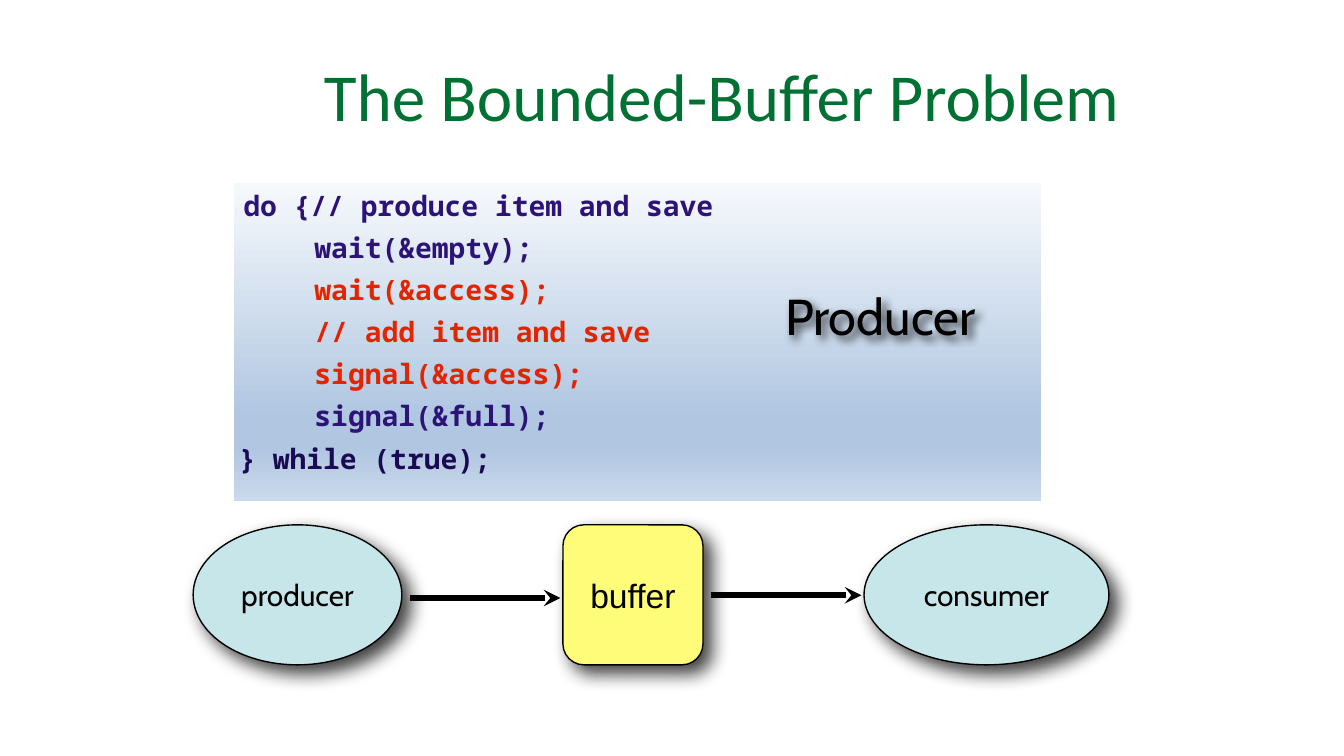
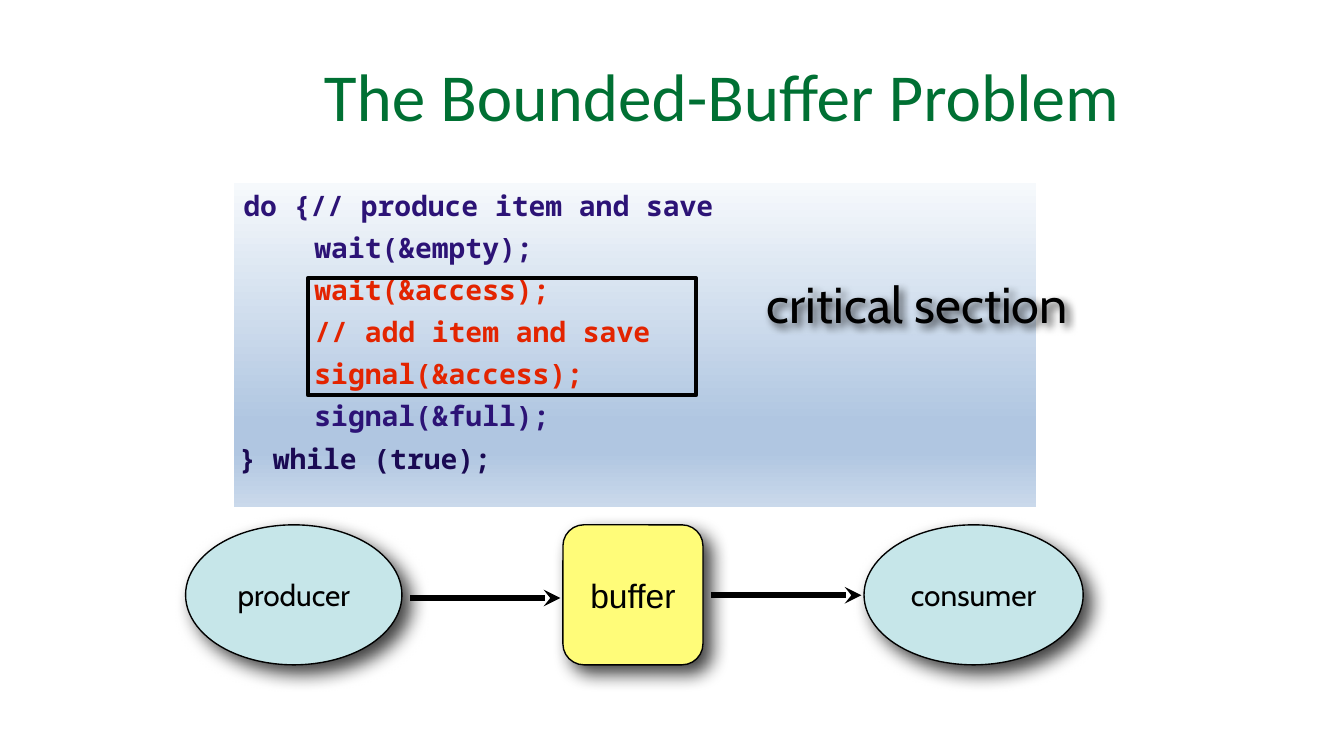
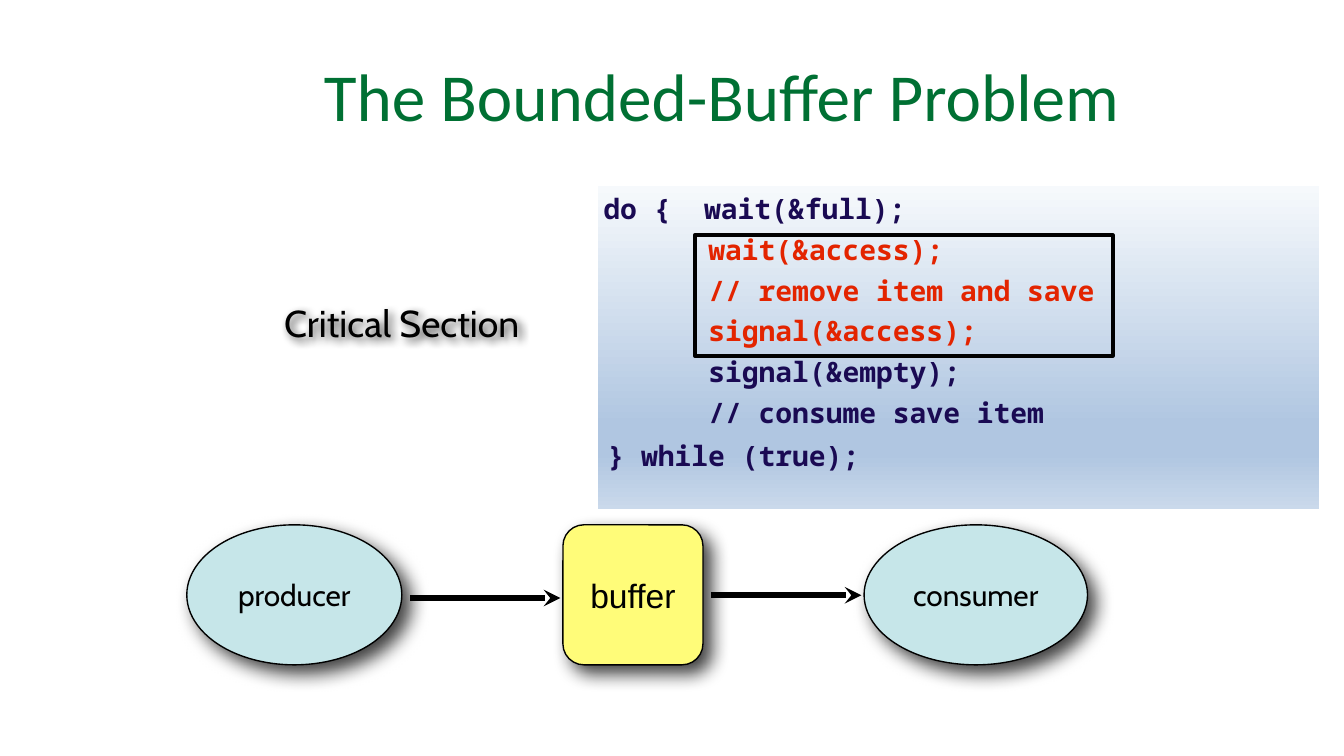
from lxml import etree
from pptx import Presentation
from pptx.dml.color import RGBColor
from pptx.enum.shapes import MSO_CONNECTOR, MSO_SHAPE
from pptx.enum.text import MSO_ANCHOR, PP_ALIGN
from pptx.oxml import parse_xml
from pptx.oxml.ns import nsdecls, qn
from pptx.util import Pt

RECT, OVAL, ROUNDED = MSO_SHAPE.RECTANGLE, MSO_SHAPE.OVAL, MSO_SHAPE.ROUNDED_RECTANGLE
STRAIGHT = MSO_CONNECTOR.STRAIGHT
TOP, MIDDLE = MSO_ANCHOR.TOP, MSO_ANCHOR.MIDDLE
LEFT, CENTER, RIGHT = PP_ALIGN.LEFT, PP_ALIGN.CENTER, PP_ALIGN.RIGHT

BLACK = RGBColor(0x00, 0x00, 0x00)
GREEN = RGBColor(0x00, 0x70, 0x33)
VIOLET = RGBColor(0x2C, 0x13, 0x76)
INDIGO = RGBColor(0x1A, 0x0A, 0x53)
RED = RGBColor(0xE3, 0x24, 0x00)
PALE_BLUE = RGBColor(0xC6, 0xE6, 0xE9)
YELLOW = RGBColor(0xFF, 0xFC, 0x79)
PANEL_STOPS = [
    (0, RGBColor(0xF6, 0xF9, 0xFC)),
    (74, RGBColor(0xB0, 0xC6, 0xE1)),
    (83, RGBColor(0xB0, 0xC6, 0xE1)),
    (100, RGBColor(0xCA, 0xD9, 0xEB)),
]
TITLE_FONT, LABEL_FONT, BUFFER_FONT, CODE_FONT = "Calibri", "Cabin", "Arial", "Noto Sans Mono"


class Deck:
    """Holds the shared style and the current slide."""

    def __init__(self):
        self.prs = Presentation()
        self.prs.slide_width, self.prs.slide_height = Pt(720), Pt(405)
        self.s = None

    def new_slide(self, title):
        self.s = self.prs.slides.add_slide(self.prs.slide_layouts[6])
        self.text(title, (116.6, 5.8, 486, 89.3), TITLE_FONT, 36, GREEN, RIGHT, MIDDLE)

    def frame(self, sp, anchor):
        tf = sp.text_frame
        tf.word_wrap = True
        tf.vertical_anchor = anchor
        tf.margin_left = tf.margin_right = tf.margin_top = tf.margin_bottom = Pt(2.9)
        return tf

    def style(self, p, text, font, size, color, align, indent=0, bold=False):
        p.text = text
        p.alignment = align
        p._p.get_or_add_pPr().set("indent", str(Pt(indent)))
        p.font.name, p.font.size, p.font.bold = font, Pt(size), bold
        p.font.color.rgb = color

    def shadow(self, sp, blur, distance):
        sp._element.spPr.append(parse_xml(
            f'<a:effectLst {nsdecls("a")}><a:outerShdw blurRad="{Pt(blur)}" dist="{Pt(distance)}" '
            f'dir="2700000" algn="tl" rotWithShape="0"><a:srgbClr val="{BLACK}">'
            '<a:alpha val="75000"/></a:srgbClr></a:outerShdw></a:effectLst>'))

    def text(self, text, box, font, size, color, align=CENTER, anchor=TOP):
        sp = self.s.shapes.add_textbox(*map(Pt, box))
        self.style(self.frame(sp, anchor).paragraphs[0], text, font, size, color, align)
        return sp

    def label(self, text, box, size):
        self.shadow(self.text(text, box, LABEL_FONT, size, BLACK), 5, 3)

    def shape(self, kind, box, fill=None, line_width=None):
        sp = self.s.shapes.add_shape(kind, *map(Pt, box))
        if fill is None:
            sp.fill.background()
        else:
            sp.fill.solid()
            sp.fill.fore_color.rgb = fill
        if line_width is None:
            sp.line.fill.background()
        else:
            sp.line.color.rgb = BLACK
            sp.line.width = Pt(line_width)
        return sp

    def node(self, text, kind, left, width, fill, font=LABEL_FONT, size=16):
        sp = self.shape(kind, (left, 281.2, width, 75), fill, 0.75)
        if kind == ROUNDED:
            sp.adjustments[0] = 0.15
        self.shadow(sp, 10, 6)
        self.style(self.frame(sp, MIDDLE).paragraphs[0], text, font, size, BLACK, CENTER)

    def arrow(self, left, y, length=80.6):
        c = self.s.shapes.add_connector(STRAIGHT, Pt(left), Pt(y), Pt(left + length), Pt(y))
        c.line.color.rgb = BLACK
        c.line.width = Pt(3)
        etree.SubElement(c.line._get_or_add_ln(), qn("a:tailEnd"), type="stealth")
        etree.SubElement(c._element.spPr, qn("a:effectLst"))

    def code_panel(self, box, lines, gap):
        """Each line is (text, colour, indent); the closing line has a wider gap."""
        sp = self.shape(RECT, box)
        sp.shadow.inherit = False
        stops = "".join(f'<a:gs pos="{pos * 1000}"><a:srgbClr val="{color}"/></a:gs>'
                        for pos, color in PANEL_STOPS)
        spPr = sp._element.spPr
        spPr.replace(spPr.find(qn("a:noFill")), parse_xml(
            f'<a:gradFill {nsdecls("a")} rotWithShape="1"><a:gsLst>{stops}</a:gsLst>'
            '<a:lin ang="5400000" scaled="0"/></a:gradFill>'))
        tf = self.frame(sp, TOP)
        for i, (text, color, indent) in enumerate(lines):
            p = tf.add_paragraph() if i else tf.paragraphs[0]
            self.style(p, text, CODE_FONT, 15, color, LEFT, indent, True)
            if i:
                p.space_before = Pt(5.2 if i == len(lines) - 1 else gap)

    def critical_frame(self, box):
        self.shape(RECT, box, line_width=2).shadow.inherit = False

    def flow(self, producer_left, consumer_width):
        """Producer, buffer and consumer joined by arrows."""
        self.node("producer", OVAL, producer_left, 215.3 - producer_left, PALE_BLUE)
        self.node("consumer", OVAL, 462.9, consumer_width, PALE_BLUE)
        self.node("buffer", ROUNDED, 301.6, 75, YELLOW, BUFFER_FONT, 18)
        self.arrow(219.6, 320.4)
        self.arrow(380.9, 318.9)


TITLE = "The Bounded-Buffer Problem"
PRODUCER_CODE = [
    ("do {// produce item and save", VIOLET, 2.2),
    ("wait(&empty);", VIOLET, 40.3),
    ("wait(&access);", RED, 40.3),
    ("// add item and save", RED, 40.3),
    ("signal(&access);", RED, 40.3),
    ("signal(&full);", VIOLET, 40.3),
    ("} while (true);", INDIGO, 0),
]
CONSUMER_CODE = [
    ("do {  wait(&full);", INDIGO, 0),
    ("wait(&access);", RED, 56.2),
    ("// remove item and save", RED, 56.2),
    ("signal(&access);", RED, 56.2),
    ("signal(&empty);", INDIGO, 56.2),
    ("// consume save item", INDIGO, 56.2),
    ("} while (true);", INDIGO, 2.2),
]


def main():
    deck = Deck()

    # Producer code
    deck.new_slide(TITLE)
    deck.code_panel((125.3, 97.9, 432.5, 170.6), PRODUCER_CODE, 4.5)
    deck.flow(103.5, 131.2)
    deck.label("Producer", (403.2, 149.8, 136.8, 36.7), 27)

    # Critical section of the producer
    deck.new_slide(TITLE)
    deck.code_panel((125.3, 97.9, 429.8, 173.7), PRODUCER_CODE, 4.5)
    deck.flow(99.4, 117.4)
    deck.label("critical section", (402.5, 143.3, 177.8, 59), 27)
    deck.critical_frame((164.9, 149, 208.1, 62.8))

    # Critical section of the consumer
    deck.new_slide(TITLE)
    deck.code_panel((320.4, 99.8, 386.2, 173), CONSUMER_CODE, 3.8)
    deck.flow(100.1, 119.7)
    deck.critical_frame((372.2, 126, 223.9, 64.6))
    deck.label("Critical Section", (142.6, 157.7, 145.4, 36.7), 20)

    deck.prs.save("out.pptx")


if __name__ == "__main__":
    main()
